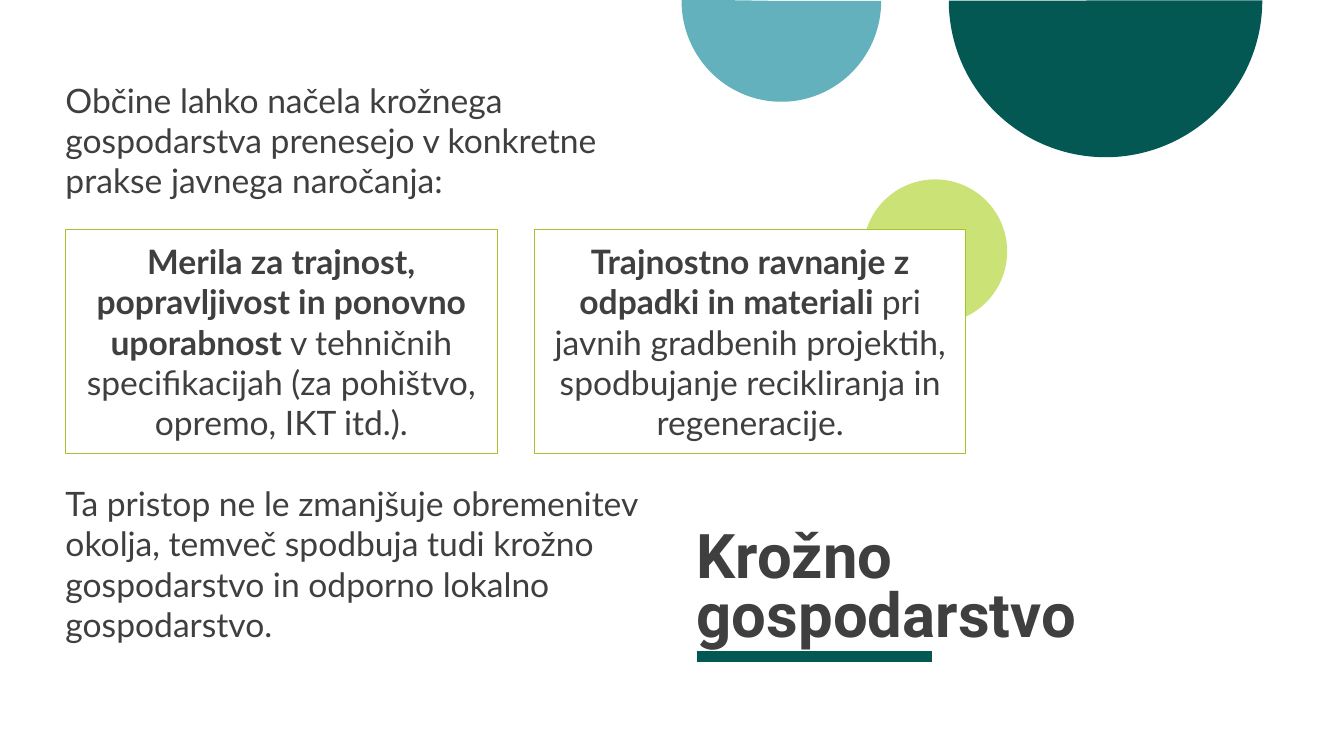
"""Build the circular economy slide."""
from lxml import etree
from pptx import Presentation
from pptx.dml.color import RGBColor
from pptx.enum import shapes as kinds, text as tx
from pptx.oxml import ns
from pptx.util import Inches, Pt

HUES = {"teal": "035854", "blue": "64B1BE", "lime": "CBE277",
        "edge": "A3C42A", "ink": "3F3F3F", "white": "FFFFFF"}


def hue(name):
    return RGBColor.from_string(HUES[name])


def write(shape, *runs, size=24, font="Lato", align="LEFT", anchor="BOTTOM", inset=0, space=1.0):
    """Fill a shape with one paragraph of (words, bold) runs."""
    frame = shape.text_frame
    frame.word_wrap = True
    frame.auto_size = tx.MSO_AUTO_SIZE.NONE
    frame.vertical_anchor = tx.MSO_ANCHOR[anchor]
    frame.margin_left = frame.margin_right = Inches(inset)
    frame.margin_top = frame.margin_bottom = Inches(inset)
    para = frame.paragraphs[0]
    para.alignment = tx.PP_ALIGN[align]
    para.line_spacing = space
    for words, bold in runs:
        run = para.add_run()
        run.text = words
        run.font.name = font
        run.font.size = Pt(size)
        run.font.bold = bold
        run.font.color.rgb = hue("ink")


deck = Presentation()
deck.slide_width = Inches(13.33)
deck.slide_height = Inches(7.5)
slide = deck.slides.add_slide(deck.slide_layouts[5])
items = slide.shapes

rule = items.add_connector(kinds.MSO_CONNECTOR.STRAIGHT,
                           Inches(6.91), Inches(6.51), Inches(9.24), Inches(6.51))
rule.line.color.rgb = hue("teal")
rule.line.width = Pt(8)
etree.SubElement(rule.element.spPr, ns.qn("a:effectLst"))

for kind, left, top, wide, high, sweep, fill in (
    ("PIE", 9.41, -1.55, 3.11, 3.11, 107.96, "teal"),
    ("PIE", 6.76, -0.99, 1.98, 2, 108.52, "blue"),
    ("OVAL", 8.56, 1.78, 1.43, 1.43, None, "lime"),
):
    disc = items.add_shape(kinds.MSO_SHAPE[kind], Inches(left), Inches(top),
                           Inches(wide), Inches(high))
    disc.shadow.inherit = False
    disc.fill.solid()
    disc.fill.fore_color.rgb = hue(fill)
    disc.line.fill.background()
    if sweep:
        disc.adjustments[0] = 0
        disc.adjustments[1] = sweep

title = items.title
title.left, title.top = Inches(6.91), Inches(4.93)
title.width, title.height = Inches(5.77), Inches(1.51)
write(title, ("Krožno gospodarstvo", True), size=44, font="Roboto", space=0.8)

for top, high, words in (
    (0.79, 1.2, "Občine lahko načela krožnega gospodarstva prenesejo "
                "v konkretne prakse javnega naročanja:"),
    (4.79, 1.6, "Ta pristop ne le zmanjšuje obremenitev okolja, temveč spodbuja "
                "tudi krožno gospodarstvo in odporno lokalno gospodarstvo."),
):
    note = items.add_textbox(Inches(0.65), Inches(top), Inches(5.7), Inches(high))
    write(note, (words, False))

for left, lead, rest in (
    (0.65, "Merila za trajnost, popravljivost in ponovno uporabnost ",
     "v tehničnih specifikacijah (za pohištvo, opremo, IKT itd.)."),
    (5.3, "Trajnostno ravnanje z odpadki in materiali ",
     "pri javnih gradbenih projektih, spodbujanje recikliranja in regeneracije."),
):
    card = items.add_shape(kinds.MSO_SHAPE.RECTANGLE, Inches(left), Inches(2.28),
                           Inches(4.28), Inches(2.22))
    card.shadow.inherit = False
    card.fill.solid()
    card.fill.fore_color.rgb = hue("white")
    card.line.color.rgb = hue("edge")
    card.line.width = Pt(0.75)
    write(card, (lead, True), (rest, False), align="CENTER", anchor="MIDDLE", inset=0.1)

deck.save("out.pptx")
